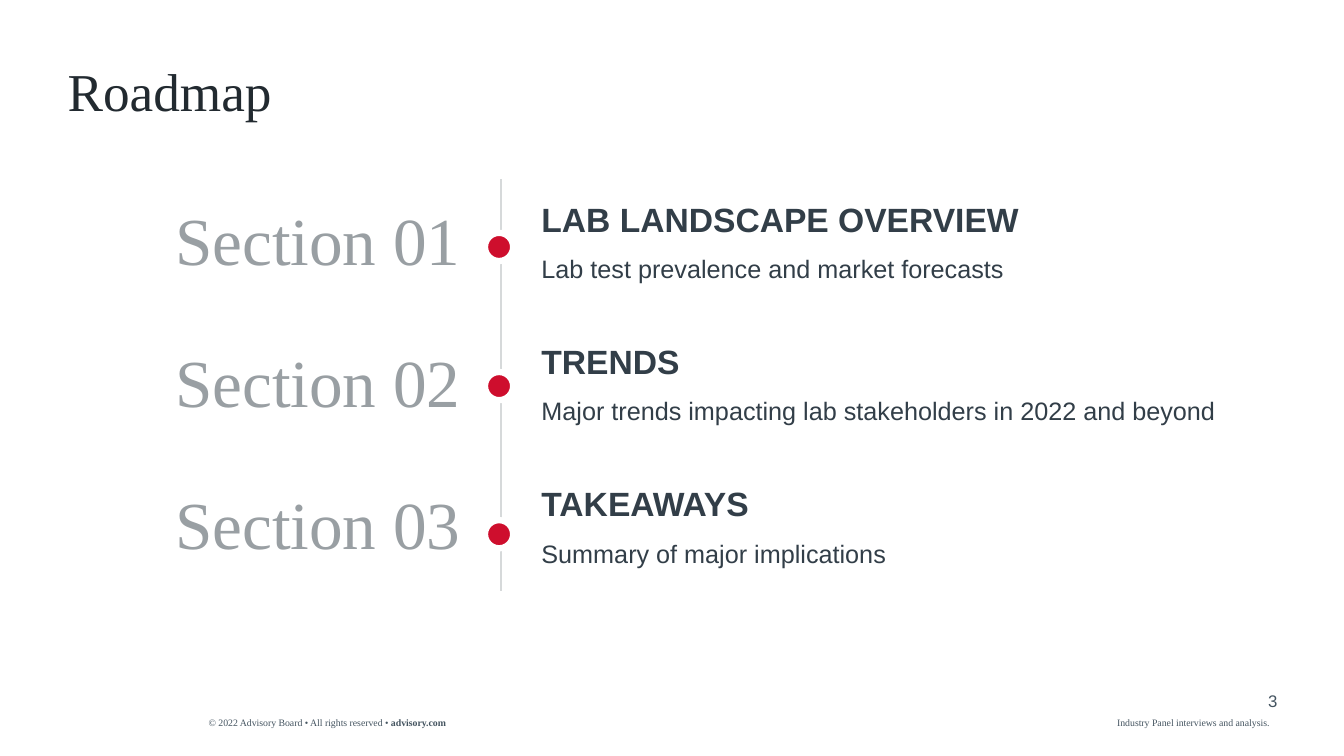
from dataclasses import dataclass

from lxml.etree import SubElement
from pptx import Presentation
from pptx.dml.color import RGBColor
from pptx.enum.shapes import MSO_SHAPE
from pptx.enum.text import MSO_ANCHOR, MSO_AUTO_SIZE, PP_ALIGN
from pptx.oxml.ns import qn
from pptx.slide import Slide
from pptx.table import _Cell
from pptx.text.text import TextFrame, _Paragraph
from pptx.util import Pt

PX = 9144
SERIF = "Times New Roman"
SANS = "Arial"
COLOURS = {
    "title": "222A30",
    "section": "999FA3",
    "topic": "323E48",
    "footer": "445460",
    "rule": "D6D9DA",
    "marker": "CE0E2D",
    "ring": "FFFFFF",
}


@dataclass
class Section:
    label: str
    heading: str
    summary: str
    row_height: int
    marker_top: int


@dataclass
class FooterNote:
    phrases: list[str]
    left: int
    top: int
    width: int
    height: int
    font: str = SERIF
    size: int = 7
    align: PP_ALIGN = PP_ALIGN.LEFT


SECTIONS = [
    Section("Section 01", "LAB LANDSCAPE OVERVIEW",
            "Lab test prevalence and market forecasts", 126, 231),
    Section("Section 02", "TRENDS",
            "Major trends impacting lab stakeholders in 2022 and beyond", 156, 369),
    Section("Section 03", "TAKEAWAYS", "Summary of major implications", 126, 516),
]
FOOTER_NOTES = [
    FooterNote(["© 2022 Advisory Board • All rights reserved • ", "advisory.com"],
               207, 711, 326, 12),
    FooterNote(["Industry Panel interviews and analysis."], 1108, 711, 159, 12),
    FooterNote(["3"], 1217, 685, 50, 20, SANS, 12, PP_ALIGN.RIGHT),
]


def px(length: int) -> int:
    return length * PX


def colour(role: str) -> RGBColor:
    return RGBColor.from_string(COLOURS[role])


def style_runs(paragraph: _Paragraph, font: str, size: int, role: str,
               bold: bool = False) -> None:
    for run in paragraph.runs:
        run.font.name = font
        run.font.size = Pt(size)
        run.font.color.rgb = colour(role)
        run.font.bold = bold


def clear_insets(frame: TextFrame) -> None:
    frame.margin_left = frame.margin_right = 0
    frame.margin_top = frame.margin_bottom = 0
    frame.word_wrap = True
    frame.auto_size = MSO_AUTO_SIZE.NONE
    frame.vertical_anchor = MSO_ANCHOR.TOP


def set_title(slide: Slide) -> None:
    title = slide.shapes.title
    title.left, title.top = px(67), px(65)
    title.width, title.height = px(1200), px(59)
    title.text_frame.text = "Roadmap"
    clear_insets(title.text_frame)
    paragraph = title.text_frame.paragraphs[0]
    paragraph.alignment = PP_ALIGN.LEFT
    paragraph.line_spacing = 0.9
    style_runs(paragraph, SERIF, 38, "title")


def add_footer_note(slide: Slide, note: FooterNote) -> None:
    box = slide.shapes.add_textbox(
        px(note.left), px(note.top), px(note.width), px(note.height))
    clear_insets(box.text_frame)
    paragraph = box.text_frame.paragraphs[0]
    paragraph.alignment = note.align
    for phrase in note.phrases:
        paragraph.add_run().text = phrase
    style_runs(paragraph, note.font, note.size, "footer")
    for run in paragraph.runs[1:]:
        run.font.bold = True


def format_cell(cell: _Cell, ruled_edge: str) -> None:
    cell.margin_left = cell.margin_right = px(40)
    cell.margin_top = cell.margin_bottom = px(20)
    cell.vertical_anchor = MSO_ANCHOR.MIDDLE
    properties = cell._tc.get_or_add_tcPr()
    for edge in ("lnL", "lnR", "lnT", "lnB"):
        border = SubElement(properties, qn(f"a:{edge}"))
        if edge == ruled_edge:
            border.set("w", str(Pt(2.25)))
            fill = SubElement(border, qn("a:solidFill"))
            SubElement(fill, qn("a:srgbClr")).set("val", COLOURS["rule"])
        else:
            SubElement(border, qn("a:noFill"))
    cell.fill.background()


def add_roadmap(slide: Slide) -> None:
    heights = [section.row_height for section in SECTIONS]
    roadmap = slide.shapes.add_table(
        len(SECTIONS), 2, px(77), px(178), px(1190), px(sum(heights))).table
    roadmap.first_row = roadmap.horz_banding = False
    roadmap.columns[0].width = px(420)
    roadmap.columns[1].width = px(770)
    for index, section in enumerate(SECTIONS):
        roadmap.rows[index].height = px(section.row_height)
        label, topic = roadmap.cell(index, 0), roadmap.cell(index, 1)
        format_cell(label, "lnR")
        format_cell(topic, "lnL")
        label.text_frame.text = section.label
        label.text_frame.paragraphs[0].alignment = PP_ALIGN.RIGHT
        style_runs(label.text_frame.paragraphs[0], SERIF, 48, "section")
        topic.text_frame.text = f"{section.heading}\n{section.summary}"
        heading, summary = topic.text_frame.paragraphs
        style_runs(heading, SANS, 24, "topic", bold=True)
        summary.space_before = Pt(12)
        style_runs(summary, SANS, 18, "topic")


def add_marker(slide: Slide, top: int) -> None:
    marker = slide.shapes.add_shape(
        MSO_SHAPE.OVAL, px(481), px(top), px(28), px(28))
    marker.shadow.inherit = False
    marker.fill.solid()
    marker.fill.fore_color.rgb = colour("marker")
    marker.line.color.rgb = colour("ring")
    marker.line.width = Pt(4.5)


def main() -> None:
    presentation = Presentation()
    presentation.slide_width, presentation.slide_height = px(1333), px(750)
    slide = presentation.slides.add_slide(presentation.slide_layouts[5])
    for note in FOOTER_NOTES:
        add_footer_note(slide, note)
    set_title(slide)
    add_roadmap(slide)
    for section in SECTIONS:
        add_marker(slide, section.marker_top)
    presentation.save("out.pptx")


if __name__ == "__main__":
    main()
